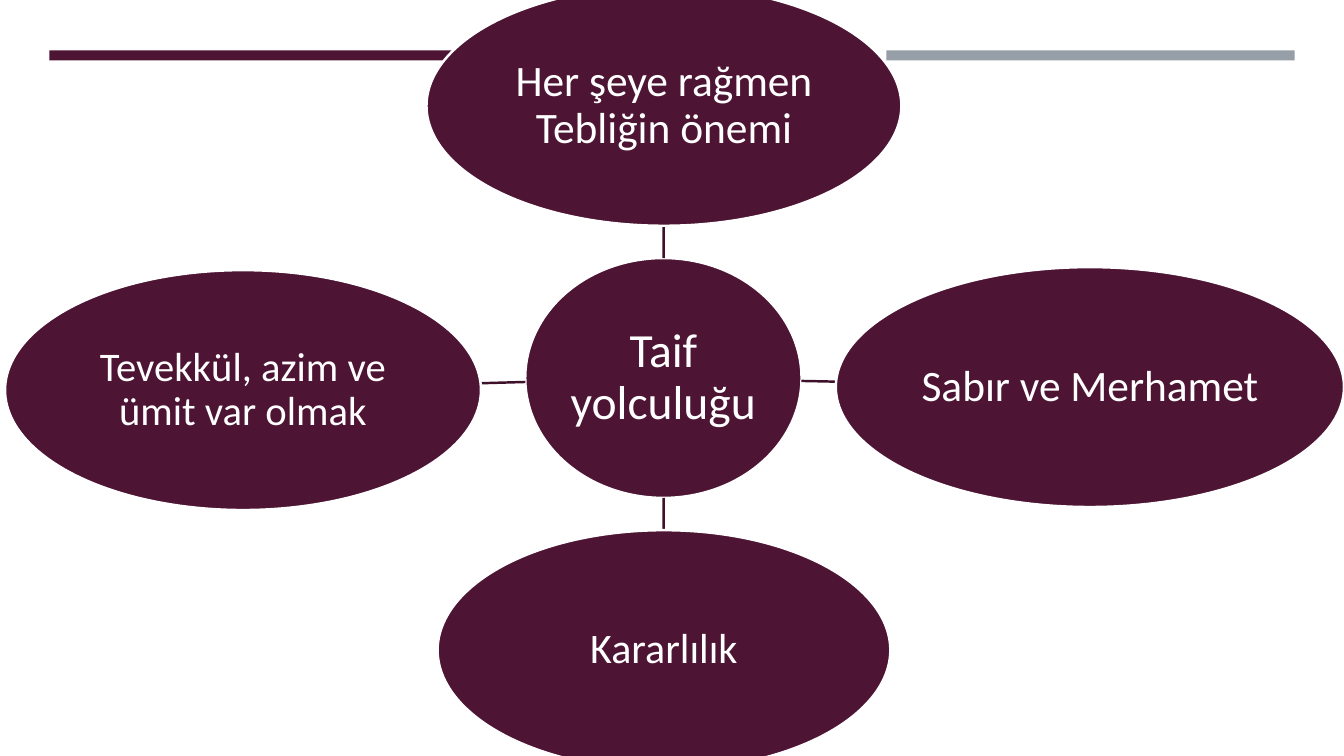
from math import hypot

from lxml.etree import SubElement
from pptx import Presentation
from pptx.dml.color import RGBColor
from pptx.enum.shapes import MSO_CONNECTOR, MSO_SHAPE
from pptx.enum.text import MSO_ANCHOR, PP_ALIGN
from pptx.oxml.ns import qn
from pptx.util import Inches, Pt

PLUM = RGBColor(0x4D, 0x14, 0x34)
MAGENTA = RGBColor(0x90, 0x31, 0x63)
GREY = RGBColor(0x96, 0x9F, 0xA7)
DARK_PLUM = RGBColor(0x3E, 0x10, 0x2A)
WHITE = RGBColor(0xFF, 0xFF, 0xFF)

# Header bars: left, colour
BARS = [(0.49, PLUM), (8.79, GREY), (4.64, MAGENTA)]
BAR_TOP, BAR_WIDTH, BAR_HEIGHT = 0.5, 4.05, 0.1

# Ovals: text, font size, left, top, width
HUB = ("Taif yolculuğu", 34, 5.21, 2.56, 2.74)
LESSONS = [
    ("Her şeye rağmen Tebliğin önemi", 31, 4.23, -0.14, 4.71),
    ("Sabır ve Merhamet", 31, 8.29, 2.65, 5.04),
    ("Kararlılık", 30, 4.34, 5.26, 4.49),
    ("Tevekkül, azim ve ümit var olmak", 29, 0.05, 2.68, 4.72),
]
OVAL_HEIGHT = 2.38
LINE_WIDTH = Pt(1.75)
MARGIN = Inches(0.02)


def add_filled(slide, kind, box, colour):
    shape = slide.shapes.add_shape(kind, *map(Inches, box))
    shape.shadow.inherit = False
    shape.fill.solid()
    shape.fill.fore_color.rgb = colour
    shape.line.fill.background()
    return shape


def add_oval(slide, oval):
    text, size, left, top, width = oval
    shape = add_filled(slide, MSO_SHAPE.OVAL, (left, top, width, OVAL_HEIGHT), PLUM)
    shape.line.color.rgb = WHITE
    shape.line.width = LINE_WIDTH

    frame = shape.text_frame
    layout = {
        "word_wrap": True, "vertical_anchor": MSO_ANCHOR.MIDDLE,
        "margin_left": MARGIN, "margin_right": MARGIN,
        "margin_top": MARGIN, "margin_bottom": MARGIN,
    }
    for name, value in layout.items():
        setattr(frame, name, value)
    paragraph = frame.paragraphs[0]
    paragraph.alignment = PP_ALIGN.CENTER
    paragraph.line_spacing = 0.9
    run = paragraph.add_run()
    run.text = text
    run.font.name = "Calibri"
    run.font.size = Pt(size)
    run.font.color.rgb = WHITE


def centre(oval):
    _, _, left, top, width = oval
    return left + width / 2, top + OVAL_HEIGHT / 2


def edge_towards(oval, other):
    """Point where the line between two oval centres leaves the first oval."""
    (x, y), (other_x, other_y) = centre(oval), centre(other)
    dx, dy = other_x - x, other_y - y
    scale = 1 / hypot(dx / (oval[4] / 2), dy / (OVAL_HEIGHT / 2))
    return Inches(x + dx * scale), Inches(y + dy * scale)


def add_spoke(slide, lesson):
    spoke = slide.shapes.add_connector(
        MSO_CONNECTOR.STRAIGHT, *edge_towards(HUB, lesson), *edge_towards(lesson, HUB))
    spoke.line.color.rgb = DARK_PLUM
    spoke.line.width = LINE_WIDTH
    SubElement(spoke.element.spPr, qn("a:effectLst"))


def main():
    deck = Presentation()
    deck.slide_width, deck.slide_height = Inches(13.33), Inches(7.5)
    slide = deck.slides.add_slide(deck.slide_layouts[6])

    for left, colour in BARS:
        add_filled(slide, MSO_SHAPE.RECTANGLE,
                   (left, BAR_TOP, BAR_WIDTH, BAR_HEIGHT), colour)

    add_oval(slide, HUB)
    for lesson in LESSONS:
        add_spoke(slide, lesson)
        add_oval(slide, lesson)

    deck.save("out.pptx")


if __name__ == "__main__":
    main()
